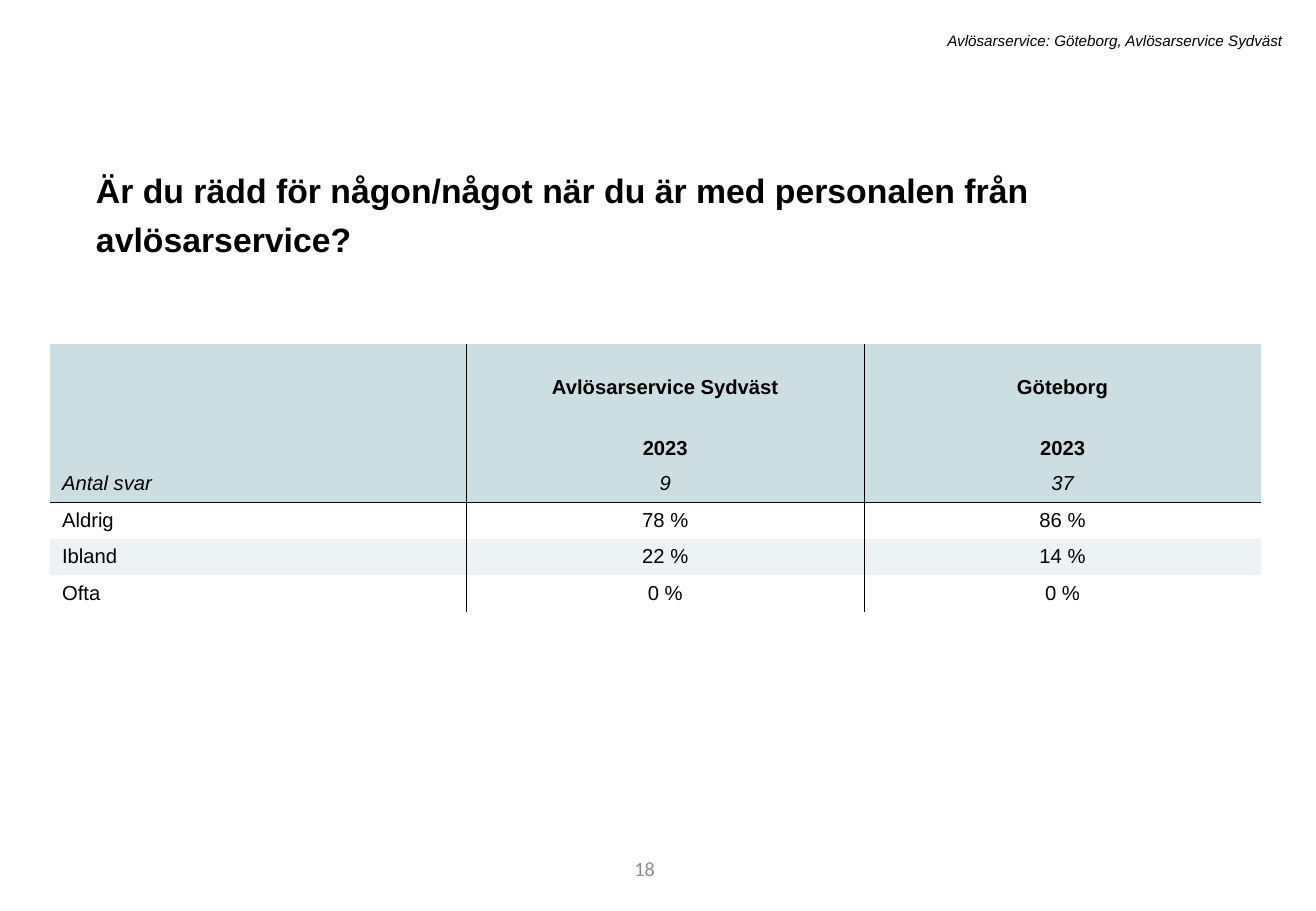
"""Build the survey slide about feeling safe with the respite care staff."""
import lxml.etree
import pptx
import pptx.dml.color
import pptx.enum.text
import pptx.oxml.ns
import pptx.util
from dataclasses import dataclass

Pt = pptx.util.Pt
ALIGN = pptx.enum.text.PP_ALIGN
ANCHOR = pptx.enum.text.MSO_ANCHOR

TITLE = "Är du rädd för någon/något när du är med personalen från avlösarservice?"
SOURCE = "Avlösarservice: Göteborg, Avlösarservice Sydväst"
PAGE_NUMBER = "18"
TABLE_ROWS = [
    ("", "Avlösarservice Sydväst", "Göteborg"),
    ("", "2023", "2023"),
    ("Antal svar", "9", "37"),
    ("Aldrig", "78 %", "86 %"),
    ("Ibland", "22 %", "14 %"),
    ("Ofta", "0 %", "0 %"),
]
HEADING_ROWS = 2
COUNT_ROW = 2
COLUMN_WIDTHS = (247, 235.5, 235.5)
HEADING_HEIGHT, ROW_HEIGHT = 36, 21.55


@dataclass(frozen=True)
class Theme:
    """Fonts, colours and type sizes."""
    font: str = "Arial"
    number_font: str = "Calibri"
    ink: str = "000000"
    grey: str = "8C8C8C"
    header: str = "CCDEE1"
    band: str = "EDF3F4"
    title_size: float = 20
    table_size: float = 12
    source_size: float = 9
    number_size: float = 12
    rule_width: float = 0.25


THEME = Theme()


def format_text(paragraph, size, align=ALIGN.LEFT, bold=False, italic=False,
                font=THEME.font, color=THEME.ink):
    """Set the alignment and font of a paragraph."""
    paragraph.alignment = align
    paragraph.font.name = font
    paragraph.font.size = Pt(size)
    paragraph.font.bold = bold
    paragraph.font.italic = italic
    paragraph.font.color.rgb = pptx.dml.color.RGBColor.from_string(color)


def add_text(slide, text, box, anchor, **style):
    """Add a wrapped, right-aligned text box."""
    frame = slide.shapes.add_textbox(*map(Pt, box)).text_frame
    frame.word_wrap = True
    frame.vertical_anchor = anchor
    frame.text = text
    format_text(frame.paragraphs[0], align=ALIGN.RIGHT, **style)


def set_borders(cell, ruled_sides):
    """Rule the named sides of a cell and clear the others."""
    properties = cell._tc.get_or_add_tcPr()
    qn = pptx.oxml.ns.qn
    for index, side in enumerate("LRTB"):
        line = lxml.etree.Element(qn(f"a:ln{side}"), w=str(Pt(THEME.rule_width)))
        if side in ruled_sides:
            fill = lxml.etree.SubElement(line, qn("a:solidFill"))
            lxml.etree.SubElement(fill, qn("a:srgbClr"), val=THEME.ink)
        else:
            lxml.etree.SubElement(line, qn("a:noFill"))
        properties.insert(index, line)


def format_cell(cell, row, column):
    """Fill, rule and typeset a cell by its place in the table."""
    heading = row < HEADING_ROWS
    cell.vertical_anchor = ANCHOR.BOTTOM if heading else ANCHOR.MIDDLE
    format_text(cell.text_frame.paragraphs[0], THEME.table_size,
                ALIGN.CENTER if column else ALIGN.LEFT,
                bold=heading, italic=row == COUNT_ROW)
    body_index = row - COUNT_ROW - 1
    if body_index < 0 or body_index % 2:
        cell.fill.solid()
        color = THEME.header if body_index < 0 else THEME.band
        cell.fill.fore_color.rgb = pptx.dml.color.RGBColor.from_string(color)
    else:
        cell.fill.background()
    sides = {"L": column > 0, "R": column < len(COLUMN_WIDTHS) - 1,
             "T": row == COUNT_ROW + 1, "B": row == COUNT_ROW}
    set_borders(cell, [side for side, ruled in sides.items() if ruled])


def add_results(slide, left, top):
    """Add the table of answers."""
    heights = [HEADING_HEIGHT if row < HEADING_ROWS else ROW_HEIGHT
               for row in range(len(TABLE_ROWS))]
    table = slide.shapes.add_table(
        len(TABLE_ROWS), len(COLUMN_WIDTHS), Pt(left), Pt(top),
        Pt(sum(COLUMN_WIDTHS)), Pt(sum(heights))).table
    table.first_row = table.horz_banding = False
    for column, width in zip(table.columns, COLUMN_WIDTHS):
        column.width = Pt(width)
    for row, (height, texts) in enumerate(zip(heights, TABLE_ROWS)):
        table.rows[row].height = Pt(height)
        for column, text in enumerate(texts):
            cell = table.cell(row, column)
            cell.text = text
            format_cell(cell, row, column)


def main():
    """Compose and save the slide."""
    presentation = pptx.Presentation()
    presentation.slide_width, presentation.slide_height = Pt(780), Pt(540)
    slide = presentation.slides.add_slide(presentation.slide_layouts[5])

    title = slide.shapes.title
    title.left, title.top, title.width, title.height = map(Pt, (49.7, 92.2, 676.8, 64))
    title.text_frame.text = TITLE
    title.text_frame.vertical_anchor = ANCHOR.TOP
    title.text_frame.auto_size = pptx.enum.text.MSO_AUTO_SIZE.NONE
    heading = title.text_frame.paragraphs[0]
    heading.line_spacing = 1.2
    format_text(heading, THEME.title_size, bold=True)

    add_text(slide, SOURCE, (129, 15.2, 638, 18), ANCHOR.TOP,
             size=THEME.source_size, italic=True)
    add_results(slide, 29.6, 204)
    add_text(slide, PAGE_NUMBER, (219.6, 500.4, 175.7, 28.8), ANCHOR.MIDDLE,
             size=THEME.number_size, font=THEME.number_font, color=THEME.grey)
    presentation.save("out.pptx")


if __name__ == "__main__":
    main()
